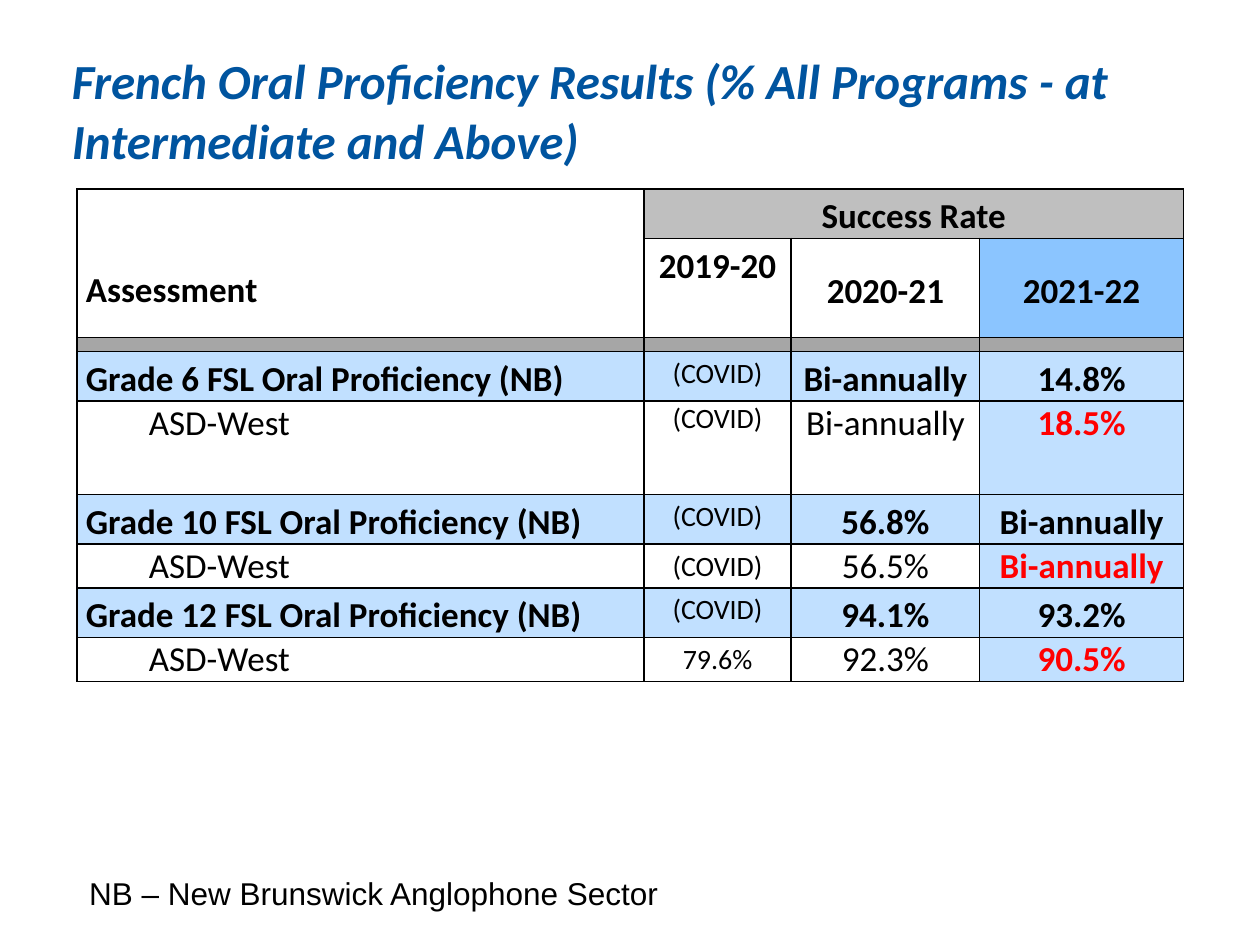
from lxml.etree import SubElement
from pptx import Presentation
from pptx.dml.color import RGBColor
from pptx.enum.text import MSO_ANCHOR, PP_ALIGN
from pptx.oxml.ns import qn
from pptx.util import Cm, Pt

TITLE_BLUE = RGBColor(0x00, 0x54, 0x9F)
BLACK = RGBColor(0x00, 0x00, 0x00)
RED = RGBColor(0xFF, 0x00, 0x00)
WHITE = RGBColor(0xFF, 0xFF, 0xFF)
HEADER_GREY = RGBColor(0xBF, 0xBF, 0xBF)
DIVIDER_GREY = RGBColor(0xA6, 0xA6, 0xA6)
YEAR_BLUE = RGBColor(0x8B, 0xC5, 0xFF)
PALE_BLUE = RGBColor(0xC1, 0xE0, 0xFF)


def add_plain_table(left, top, column_widths, row_heights, border=None):
    """Add a table without banding, with narrow margins and optional borders."""
    table = slide.shapes.add_table(
        len(row_heights), len(column_widths), Cm(left), Cm(top),
        Cm(sum(column_widths)), Cm(sum(row_heights))).table
    table.first_row = False
    table.horz_banding = False
    for column, width in zip(table.columns, column_widths):
        column.width = Cm(width)
    for row, height in zip(table.rows, row_heights):
        row.height = Cm(height)
    for cell in table.iter_cells():
        cell.margin_left = cell.margin_right = Cm(0.18)
        cell.margin_top = cell.margin_bottom = 0
        for side in ("a:lnL", "a:lnR", "a:lnT", "a:lnB"):
            line = SubElement(cell._tc.get_or_add_tcPr(), qn(side), w=str(Pt(1)))
            if border is None:
                SubElement(line, qn("a:noFill"))
            else:
                fill = SubElement(line, qn("a:solidFill"))
                SubElement(fill, qn("a:srgbClr"), val=str(border))
    return table


def write_cell(cell, text, fill=None, size=20, bold=True, color=BLACK,
               anchor=MSO_ANCHOR.MIDDLE, align=PP_ALIGN.CENTER, spacing=1.15):
    if fill is None:
        cell.fill.background()
    else:
        cell.fill.solid()
        cell.fill.fore_color.rgb = fill
    cell.vertical_anchor = anchor
    paragraph = cell.text_frame.paragraphs[0]
    paragraph.text = text
    paragraph.alignment = align
    paragraph.line_spacing = spacing
    paragraph.font.name = "Calibri"
    paragraph.font.size = Pt(size)
    paragraph.font.bold = bold
    paragraph.font.color.rgb = color


presentation = Presentation()
presentation.slide_width = Cm(25.4)
presentation.slide_height = Cm(19.05)
slide = presentation.slides.add_slide(presentation.slide_layouts[6])

# Title banner: a one-cell table
banner = add_plain_table(1.27, 1.07, [22.6], [2.36])
title_cell = banner.cell(0, 0)
write_cell(title_cell,
           "French Oral Proficiency Results (% All Programs - at Intermediate and Above)",
           size=28, color=TITLE_BLUE, align=PP_ALIGN.LEFT, spacing=1.0)
title_cell.text_frame.paragraphs[0].font.italic = True

# Results table
table = add_plain_table(1.55, 3.81, [11.43, 2.97, 3.8, 4.11],
                        [0.99, 2, 0.28, 1, 1.88, 1, 0.89, 0.99, 0.89], BLACK)

# Header rows and divider
table.cell(0, 0).merge(table.cell(1, 0))
table.cell(0, 1).merge(table.cell(0, 3))
write_cell(table.cell(0, 0), "Assessment", align=PP_ALIGN.LEFT)
table.cell(0, 0).margin_top = Cm(0.98)
write_cell(table.cell(0, 1), "Success Rate", HEADER_GREY, anchor=MSO_ANCHOR.TOP)
write_cell(table.cell(1, 1), "2019-20", WHITE, anchor=MSO_ANCHOR.TOP)
write_cell(table.cell(1, 2), "2020-21", WHITE)
write_cell(table.cell(1, 3), "2021-22", YEAR_BLUE)
for cell in table.rows[2].cells:
    cell.fill.solid()
    cell.fill.fore_color.rgb = DIVIDER_GREY
    end_properties = cell.text_frame.paragraphs[0]._p.get_or_add_endParaRPr()
    end_properties.set("sz", str(600))

# One provincial row and one district row for each grade
grades = [
    (6, ["(COVID)", "Bi-annually", "14.8%"], ["(COVID)", "Bi-annually", "18.5%"]),
    (10, ["(COVID)", "56.8%", "Bi-annually"], ["(COVID)", "56.5%", "Bi-annually"]),
    (12, ["(COVID)", "94.1%", "93.2%"], ["79.6%", "92.3%", "90.5%"]),
]
for index, (grade, province, district) in enumerate(grades):
    row = 3 + 2 * index
    write_cell(table.cell(row, 0), f"Grade {grade} FSL Oral Proficiency (NB)", PALE_BLUE,
               anchor=MSO_ANCHOR.TOP, align=PP_ALIGN.LEFT)
    district_name = table.cell(row + 1, 0)
    write_cell(district_name, "ASD-West", bold=False,
               anchor=MSO_ANCHOR.TOP, align=PP_ALIGN.LEFT, spacing=1.0)
    name_paragraph = district_name.text_frame.paragraphs[0]
    name_paragraph.level = 1
    name_paragraph._p.get_or_add_pPr().set("marL", str(Cm(1.27)))
    district_anchor = MSO_ANCHOR.TOP if index == 0 else MSO_ANCHOR.MIDDLE
    for column in (1, 2, 3):
        first, latest = column == 1, column == 3
        size = 16 if first else 20
        write_cell(table.cell(row, column), province[column - 1], PALE_BLUE, size,
                   bold=not first, anchor=MSO_ANCHOR.TOP if first else MSO_ANCHOR.MIDDLE)
        write_cell(table.cell(row + 1, column), district[column - 1],
                   PALE_BLUE if latest else WHITE, size, bold=latest,
                   color=RED if latest else BLACK, anchor=district_anchor, spacing=1.0)
    for cell in table.rows[row + 1].cells:
        cell.margin_top = Cm(0.02)

# Footnote
footnote = slide.shapes.add_textbox(Cm(1.55), Cm(17.5), Cm(15.82), Cm(1.07))
footnote.text_frame.word_wrap = True
paragraph = footnote.text_frame.paragraphs[0]
paragraph.text = "NB – New Brunswick Anglophone Sector"
paragraph.font.name = "Arial"
paragraph.font.size = Pt(18)
paragraph.font.color.rgb = BLACK

presentation.save("out.pptx")
